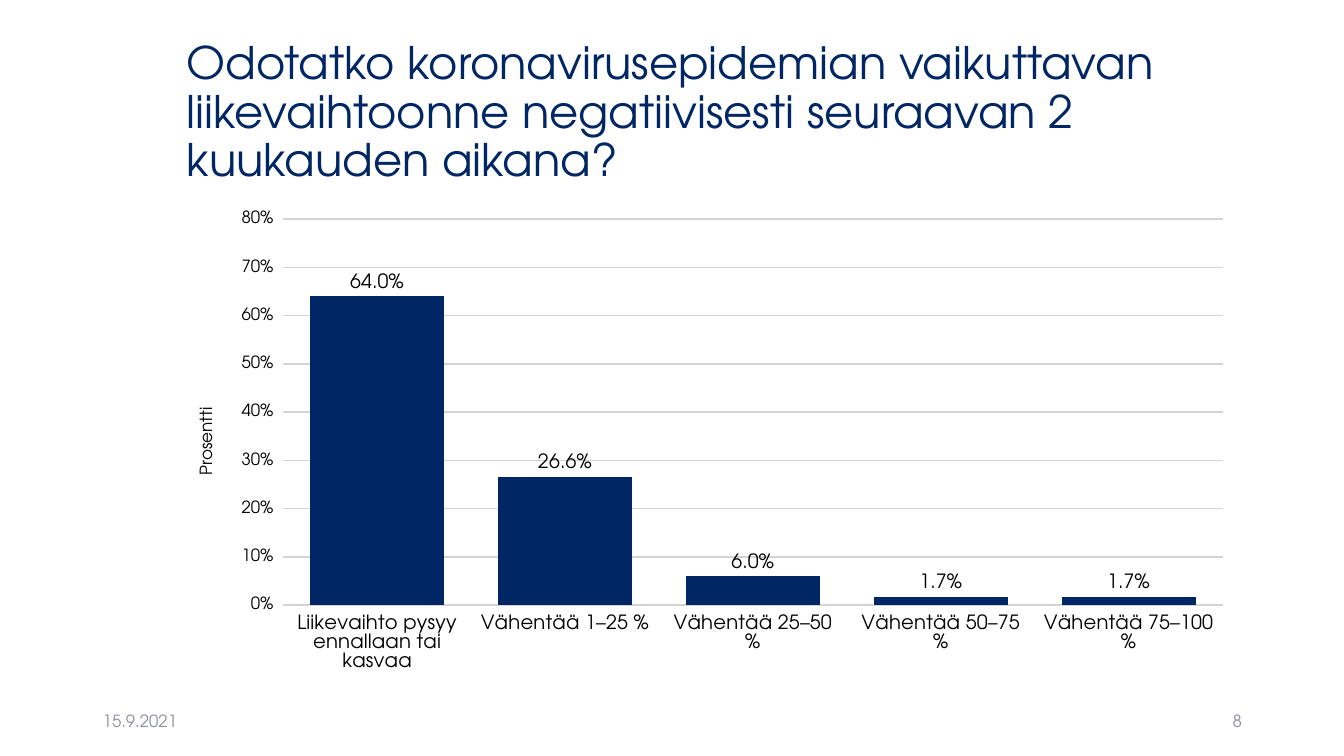
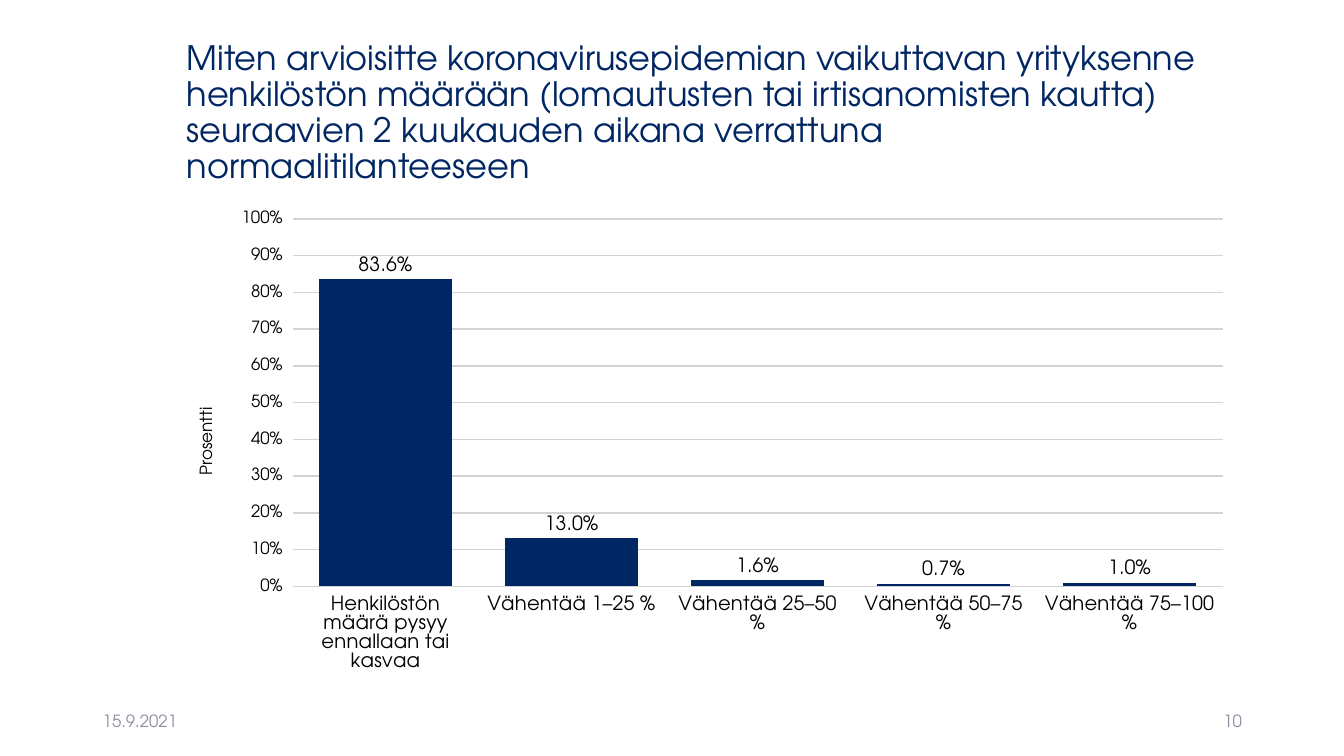
from pptx import Presentation
from pptx.chart.data import CategoryChartData
from pptx.dml.color import RGBColor
from pptx.enum.chart import XL_CHART_TYPE, XL_LABEL_POSITION, XL_TICK_MARK
from pptx.enum.text import MSO_ANCHOR, MSO_AUTO_SIZE, PP_ALIGN
from pptx.util import Cm, Pt

# Shared look
NAVY = RGBColor(0x00, 0x26, 0x63)
GRAY = RGBColor(0x8C, 0x8E, 0x9F)
GRID = RGBColor(0xD3, 0xD3, 0xD3)
BLACK = RGBColor(0x00, 0x00, 0x00)
WHITE = RGBColor(0xFF, 0xFF, 0xFF)
FACE = "TeX Gyre Adventor"

# Shared places: left, top, width, height in cm
TITLE = (4.45, 1.02, 26.9, 3.68)
CHART = (4.45, 5.08, 26.9, 12.09)
DATE = (2.34, 17.65, 7.62, 1.02)
NUMBER = (23.93, 17.65, 7.62, 1.02)

FRAME = {
    "word_wrap": True,
    "auto_size": MSO_AUTO_SIZE.NONE,
    "vertical_anchor": MSO_ANCHOR.MIDDLE,
}
BANDS = ["Vähentää 1–25 %", "Vähentää 25–50 %",
         "Vähentää 50–75 %", "Vähentää 75–100 %"]

# Page number, title, title size, first category, axis top, shares
PAGES = [
    (8, "Odotatko koronavirusepidemian vaikuttavan liikevaihtoonne "
        "negatiivisesti seuraavan 2 kuukauden aikana?", 32,
     "Liikevaihto pysyy ennallaan tai kasvaa", 0.8,
     [0.64, 0.266, 0.06, 0.017, 0.017]),
    (10, "Miten arvioisitte koronavirusepidemian vaikuttavan yrityksenne "
         "henkilöstön määrään (lomautusten tai irtisanomisten kautta) "
         "seuraavien 2 kuukauden aikana verrattuna normaalitilanteeseen", 24,
     "Henkilöstön määrä pysyy ennallaan tai kasvaa", 1,
     [0.836, 0.13, 0.016, 0.007, 0.01]),
]


def apply(item, **values):
    for name, value in values.items():
        setattr(item, name, value)


def style(font, size, color=BLACK):
    apply(font, name=FACE, size=Pt(size), bold=False)
    font.color.rgb = color


def paint(fill, color):
    fill.solid()
    fill.fore_color.rgb = color


def write(shape, text, size, color, align=PP_ALIGN.LEFT, space=1.0):
    frame = shape.text_frame
    apply(frame, **FRAME)
    para = frame.paragraphs[0]
    para.text = text
    apply(para, alignment=align, line_spacing=space)
    style(para.runs[0].font, size, color)


def add_title(slide, text, size):
    title = slide.shapes.title
    left, top, width, height = map(Cm, TITLE)
    apply(title, left=left, top=top, width=width, height=height)
    write(title, text, size, NAVY, space=0.9)


def add_note(slide, place, text, align):
    box = slide.shapes.add_textbox(*map(Cm, place))
    write(box, text, 12, GRAY, align)


def style_axis(axis, size):
    apply(axis, major_tick_mark=XL_TICK_MARK.OUTSIDE,
          minor_tick_mark=XL_TICK_MARK.NONE)
    axis.format.line.fill.background()
    style(axis.tick_labels.font, size)


def add_bars(slide, first, top, shares):
    data = CategoryChartData(number_format="0.0%")
    data.categories = [first] + BANDS
    data.add_series("Series 1", shares)
    chart = slide.shapes.add_chart(
        XL_CHART_TYPE.COLUMN_CLUSTERED, *map(Cm, CHART), data).chart
    apply(chart, has_legend=False, has_title=False)
    style(chart.font, 12)

    # Axes
    style_axis(chart.category_axis, 14)
    scale = chart.value_axis
    style_axis(scale, 12)
    apply(scale, minimum_scale=0, maximum_scale=top, major_unit=0.1,
          has_major_gridlines=True)
    apply(scale.tick_labels, number_format="0%",
          number_format_is_linked=False)
    line = scale.major_gridlines.format.line
    line.color.rgb = GRID
    line.width = Pt(1)
    para = scale.axis_title.text_frame.paragraphs[0]
    para.text = "Prosentti"
    style(para.runs[0].font, 12)

    # Columns and their labels
    plot = chart.plots[0]
    apply(plot, gap_width=40, vary_by_categories=False, has_data_labels=True)
    paint(plot.series[0].format.fill, NAVY)
    labels = plot.data_labels
    apply(labels, show_value=True, number_format="0.0%",
          number_format_is_linked=False,
          position=XL_LABEL_POSITION.OUTSIDE_END)
    style(labels.font, 14)


def main():
    deck = Presentation()
    apply(deck, slide_width=Cm(33.87), slide_height=Cm(19.05))
    paint(deck.slide_master.background.fill, WHITE)
    for number, title, size, first, top, shares in PAGES:
        slide = deck.slides.add_slide(deck.slide_layouts[5])
        add_title(slide, title, size)
        add_note(slide, DATE, "15.9.2021", PP_ALIGN.LEFT)
        add_note(slide, NUMBER, str(number), PP_ALIGN.RIGHT)
        add_bars(slide, first, top, shares)
    deck.save("out.pptx")


if __name__ == "__main__":
    main()
